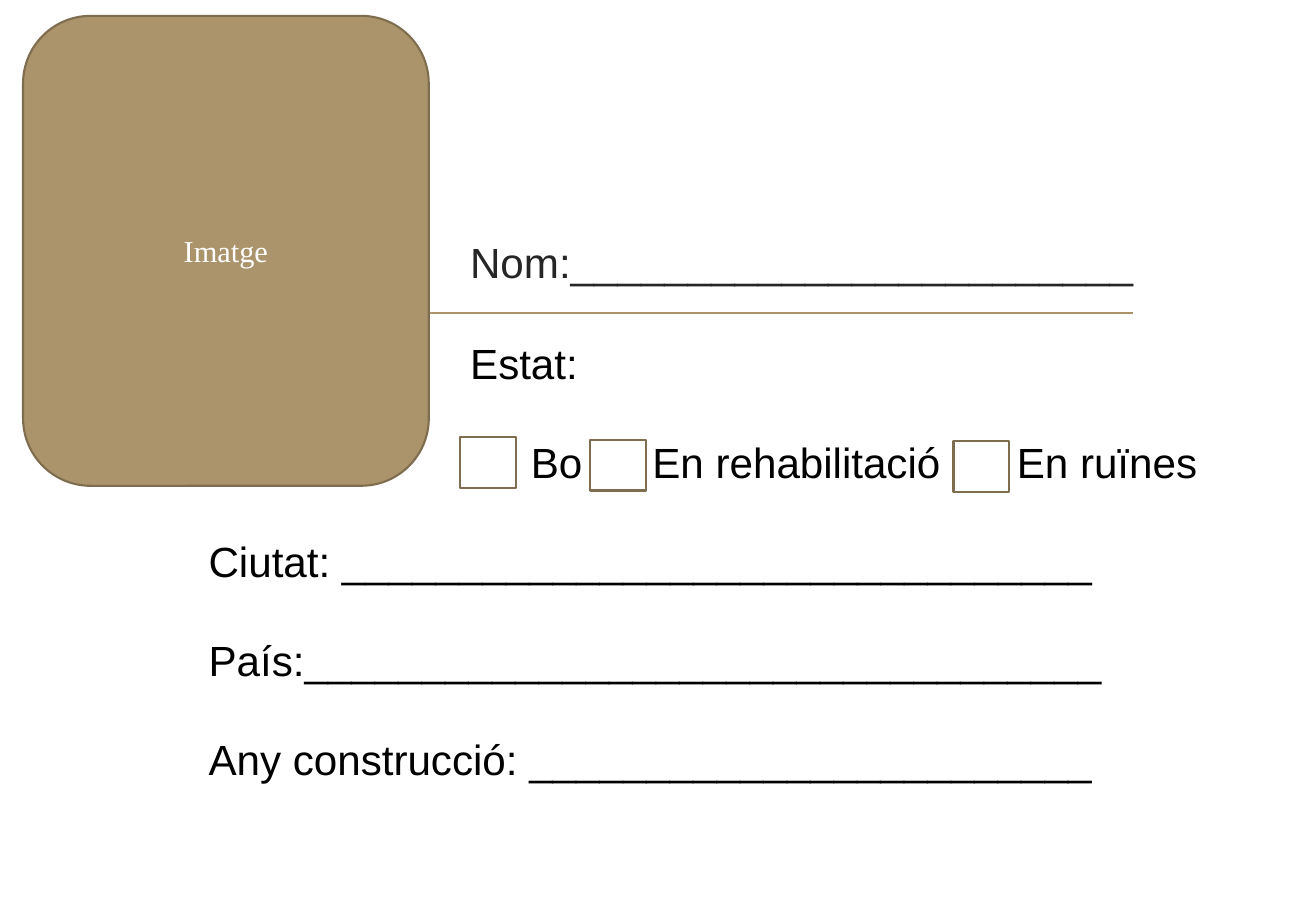
"""Build a form slide for recording a building's name, state and location."""
from lxml.etree import SubElement
from pptx import Presentation
from pptx.dml.color import RGBColor
from pptx.enum.shapes import MSO_CONNECTOR, MSO_SHAPE
from pptx.enum.text import MSO_ANCHOR, PP_ALIGN
from pptx.oxml.ns import qn
from pptx.util import Pt

COLORS = {
    "paper": "FFFFFF",
    "sand": "AB946B",
    "outline": "7F6D4F",
    "name": "262626",
    "text": "000000",
}
FORM_SIZE = 25
LINE_GAP = 28.75
STATE_TABS = (36, 108, 324)
CHECKBOXES = ((272.9, 259.2), (349.9, 260.6), (565.2, 261.4))


def color(name):
    return RGBColor.from_string(COLORS[name])


def format_paragraph(paragraph, font_name, size, color_name):
    for run in paragraph.runs:
        run.font.name = font_name
        run.font.size = Pt(size)
        run.font.color.rgb = color(color_name)


def add_tabs(paragraph, positions):
    tab_list = SubElement(paragraph._p.get_or_add_pPr(), qn("a:tabLst"))
    for position in positions:
        SubElement(tab_list, qn("a:tab"), pos=str(Pt(position)), algn="l")


def add_fields(slide, left, top, width, height, lines, color_name="text", tabs=()):
    box = slide.shapes.add_textbox(Pt(left), Pt(top), Pt(width), Pt(height))
    text_frame = box.text_frame
    text_frame.word_wrap = True
    text_frame.text = "\n".join(lines)
    for index, paragraph in enumerate(text_frame.paragraphs):
        if tabs and "\t" in lines[index]:
            add_tabs(paragraph, tabs)
        if index:
            paragraph.space_before = Pt(LINE_GAP)
        format_paragraph(paragraph, "Arial", FORM_SIZE, color_name)


def add_box(slide, kind, left, top, width, height, fill):
    shape = slide.shapes.add_shape(kind, Pt(left), Pt(top), Pt(width), Pt(height))
    shape.shadow.inherit = False
    shape.fill.solid()
    shape.fill.fore_color.rgb = color(fill)
    shape.line.color.rgb = color("outline")
    shape.line.width = Pt(1.25)
    return shape


def add_rule(slide, left, right, y):
    rule = slide.shapes.add_connector(
        MSO_CONNECTOR.STRAIGHT, Pt(left), Pt(y), Pt(right), Pt(y))
    rule.line.color.rgb = color("sand")
    rule.line.width = Pt(1.25)
    SubElement(rule._element.spPr, qn("a:effectLst"))


def add_image_frame(slide):
    frame = add_box(slide, MSO_SHAPE.ROUNDED_RECTANGLE, 13.7, 9.4, 240.5, 278.6, "sand")
    text_frame = frame.text_frame
    text_frame.text = "Imatge"
    text_frame.vertical_anchor = MSO_ANCHOR.MIDDLE
    paragraph = text_frame.paragraphs[0]
    paragraph.alignment = PP_ALIGN.CENTER
    format_paragraph(paragraph, "Times New Roman", 18, "paper")


def main():
    presentation = Presentation()
    presentation.slide_width = Pt(780)
    presentation.slide_height = Pt(540)
    slide = presentation.slides.add_slide(presentation.slide_layouts[6])

    add_rule(slide, 108.7, 671.8, 185.8)
    add_fields(slide, 271.6, 136.4, 424.8, 36.7,
               ["Nom:________________________"], "name")
    add_image_frame(slide)
    add_fields(slide, 116.6, 313.9, 547.2, 158.4, [
        "Ciutat: ________________________________",
        "País:__________________________________",
        "Any construcció: ________________________",
    ])
    add_fields(slide, 271.6, 196.6, 450, 97.9,
               ["Estat:", "\tBo\tEn rehabilitació\tEn ruïnes"], tabs=STATE_TABS)
    for left, top in CHECKBOXES:
        add_box(slide, MSO_SHAPE.RECTANGLE, left, top, 33.1, 30.2, "paper")

    presentation.save("out.pptx")


if __name__ == "__main__":
    main()
